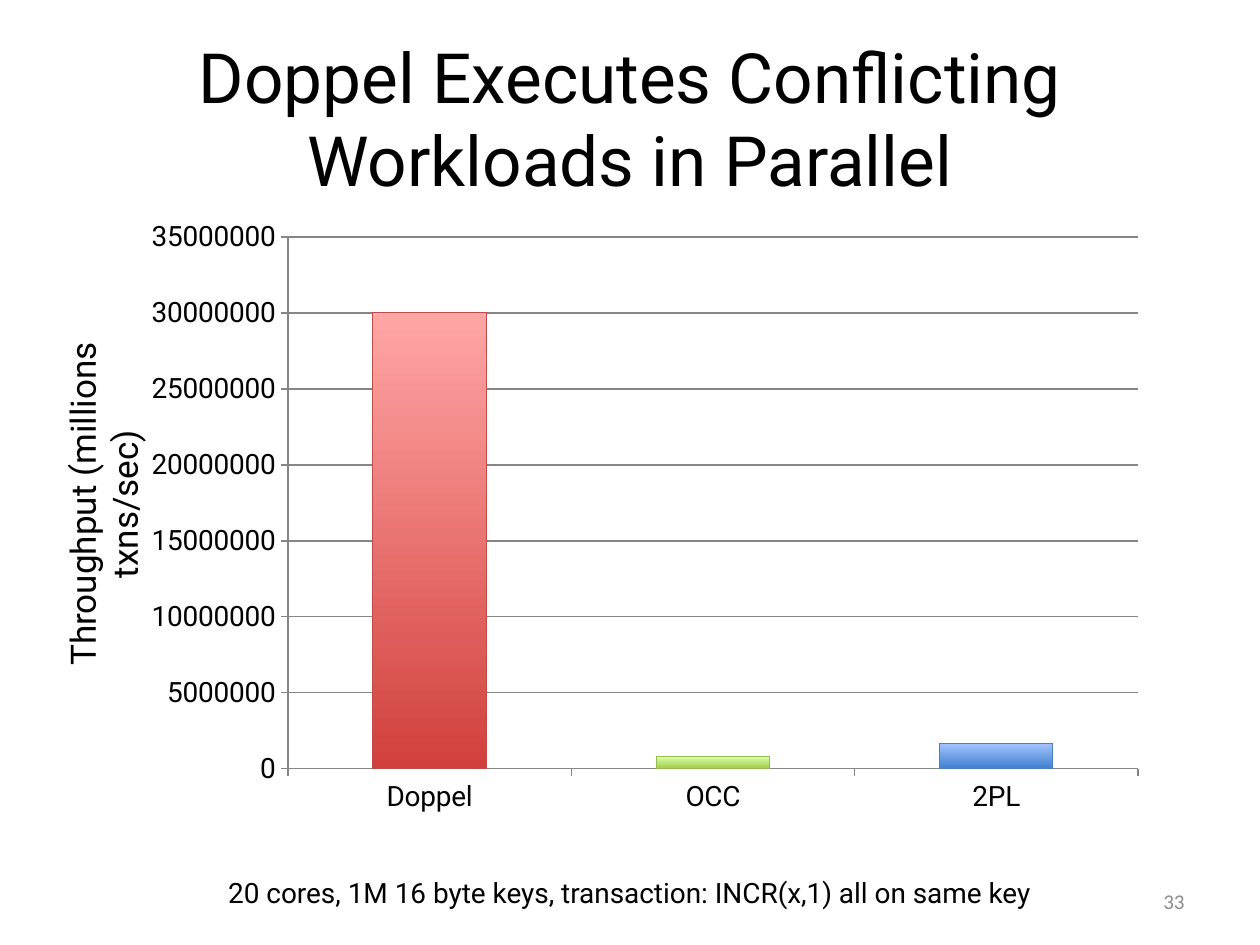
from dataclasses import dataclass

from lxml import etree
from pptx import Presentation
from pptx.chart.data import CategoryChartData
from pptx.dml.color import RGBColor
from pptx.enum import chart as ch, text
from pptx.oxml.ns import qn
from pptx.util import Pt

PX = 914400 / 126


@dataclass(frozen=True)
class Theme:
    font: str = "Roboto"
    number_font: str = "Calibri"
    ink: str = "000000"
    muted: str = "8C8C8C"
    grid: str = "868686"
    title: float = 39.6
    axis_title: float = 20
    label: float = 16
    number: float = 12


THEME = Theme()
RESULTS = [
    ("Doppel", 30000000, "D1403C", "FFA6A5", "BE4B48"),
    ("OCC", 800000, "A0CA4A", "DAFFA5", "98B954"),
    ("2PL", 1700000, "3F80CE", "A4C4FF", "4A7EBB"),
]


def emu(*lengths):
    return [round(n * PX) for n in lengths]


def rgb(value):
    return RGBColor.from_string(value)


def style_font(font, size, color=THEME.ink, name=THEME.font):
    font.size, font.name = Pt(size), name
    font.color.rgb = rgb(color)


def write(sp, words, size, align=text.PP_ALIGN.CENTER, wrap=True, **style):
    tf = sp.text_frame
    tf.word_wrap = wrap
    tf.vertical_anchor = text.MSO_ANCHOR.MIDDLE
    p = tf.paragraphs[0]
    p.text, p.alignment = words, align
    style_font(p.font, size, **style)


def add_title(slide, box):
    sp = slide.shapes.title
    sp.left, sp.top, sp.width, sp.height = emu(*box)
    write(sp, "Doppel Executes Conflicting Workloads in Parallel", THEME.title)
    sp.text_frame.auto_size = text.MSO_AUTO_SIZE.NONE


def add_label(slide, box, words, size, rotation=0, **style):
    sp = slide.shapes.add_textbox(*emu(*box))
    sp.rotation = rotation
    write(sp, words, size, **style)


def place_plot(chart, box, inner):
    area = chart._chartSpace.chart.plotArea
    for old in area.findall(qn("c:layout")):
        area.remove(old)
    layout = etree.Element(qn("c:layout"))
    manual = etree.SubElement(layout, qn("c:manualLayout"))
    x, y, w, h = inner
    settings = {
        "layoutTarget": "inner", "xMode": "edge", "yMode": "edge",
        "x": x / box[2], "y": y / box[3], "w": w / box[2], "h": h / box[3],
    }
    for tag, value in settings.items():
        etree.SubElement(manual, qn(f"c:{tag}")).set("val", str(value))
    area.insert(0, layout)


def style_axes(chart):
    for axis in (chart.category_axis, chart.value_axis):
        style_font(axis.tick_labels.font, THEME.label)
        axis.major_tick_mark = ch.XL_TICK_MARK.OUTSIDE
        axis.minor_tick_mark = ch.XL_TICK_MARK.NONE
        axis.format.line.color.rgb = rgb(THEME.grid)
    axis = chart.value_axis
    axis.minimum_scale, axis.maximum_scale, axis.major_unit = 0, 35000000, 5000000
    axis.tick_labels.number_format = "General"
    axis.tick_labels.number_format_is_linked = False
    axis.has_major_gridlines = True
    axis.major_gridlines.format.line.color.rgb = rgb(THEME.grid)


def add_throughput_chart(slide, box):
    data = CategoryChartData()
    data.categories = [name for name, *_ in RESULTS]
    data.add_series("Series 1", [value for _, value, *_ in RESULTS])
    chart = slide.shapes.add_chart(
        ch.XL_CHART_TYPE.COLUMN_CLUSTERED, *emu(*box), data
    ).chart
    chart.has_legend = chart.has_title = False
    style_font(chart.font, THEME.label)
    plot = chart.plots[0]
    plot.gap_width, plot.vary_by_categories = 150, False
    for i, (_, _, bottom, top, edge) in enumerate(RESULTS):
        fmt = plot.series[0].points[i].format
        fmt.fill.gradient()
        fmt.fill.gradient_angle = 90
        for stop, color in zip(fmt.fill.gradient_stops, (bottom, top)):
            stop.color.rgb = rgb(color)
        fmt.line.color.rgb = rgb(edge)
    style_axes(chart)
    place_plot(chart, box, (157, 28, 850, 532))


def main():
    prs = Presentation()
    prs.slide_width, prs.slide_height = emu(1260, 945)
    slide = prs.slides.add_slide(prs.slide_layouts[5])
    add_title(slide, (63, 38, 1134, 158))
    add_label(slide, (-116, 441, 438, 126), "Throughput (millions txns/sec)",
              THEME.axis_title, rotation=270, wrap=False)
    add_label(slide, (199, 861, 861, 63),
              "20 cores, 1M 16 byte keys, transaction: INCR(x,1) all on same key",
              THEME.label, wrap=False)
    add_throughput_chart(slide, (131, 209, 1027, 616))
    add_label(slide, (903, 876, 294, 50), "33", THEME.number,
              align=text.PP_ALIGN.RIGHT, color=THEME.muted, name=THEME.number_font)
    prs.save("out.pptx")


if __name__ == "__main__":
    main()
